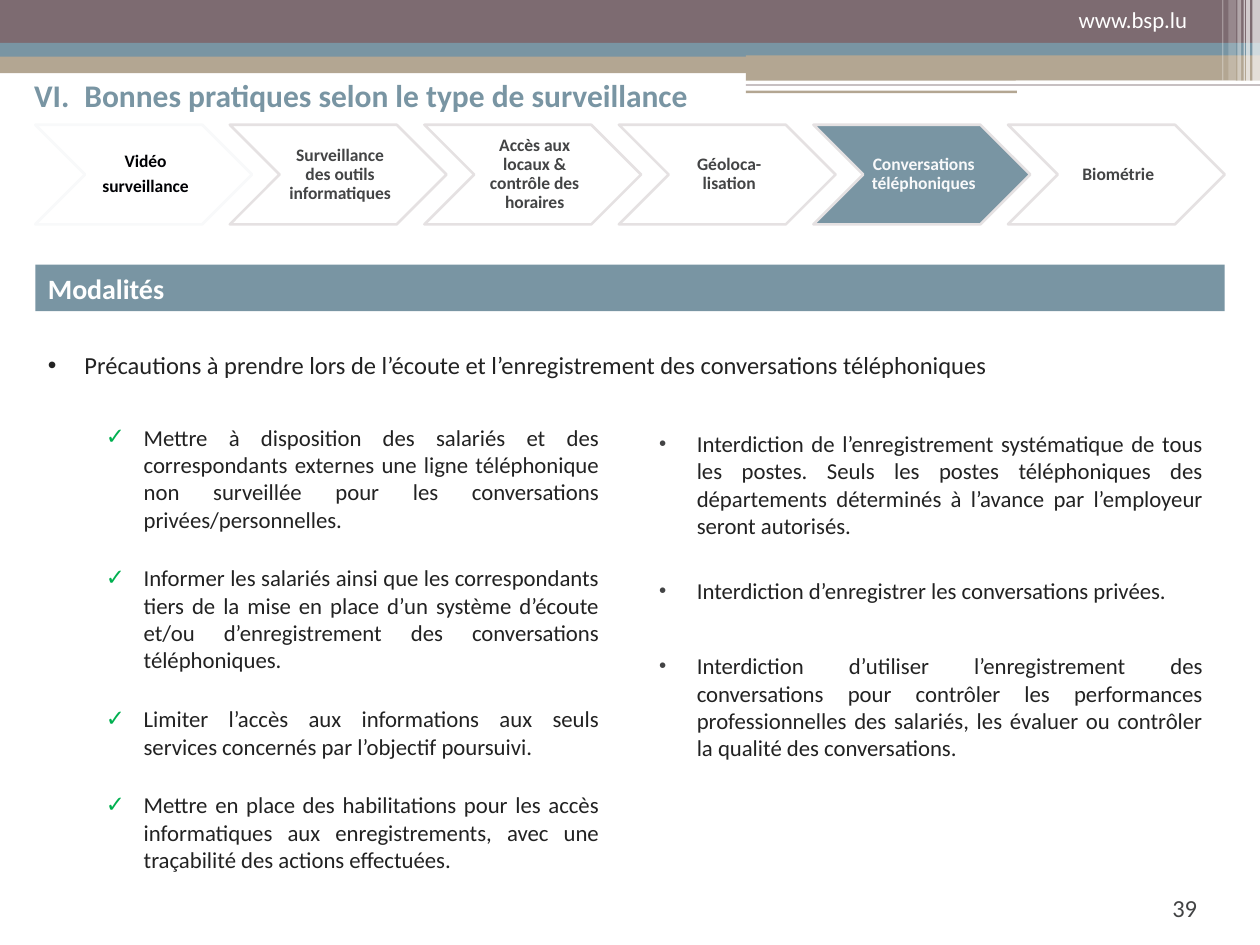
from lxml import etree
from pptx import Presentation
from pptx.dml.color import RGBColor
from pptx.enum.shapes import MSO_SHAPE as Shape
from pptx.enum.text import MSO_ANCHOR as Anchor, MSO_AUTO_SIZE as AutoSize, PP_ALIGN as Align
from pptx.oxml.ns import qn
from pptx.util import Inches, Pt

FONT = "Calibri"
PLUM, BLUE, SAND, WHITE = "7D6B71", "7995A3", "B3A692", "FFFFFF"
GREY, PALE_GREY, INK, GREEN = "434445", "E5E1E2", "222222", "00B050"


def color(hex_string):
    return RGBColor.from_string(hex_string)


def add_child(parent, tag, **attributes):
    child = etree.SubElement(parent, qn(tag))
    for name, value in attributes.items():
        child.set(name, str(value))
    return child


def place(shape, box):
    shape.left, shape.top, shape.width, shape.height = (Inches(value) for value in box)


def add_bullet(paragraph, char, hex_string, percent, indent, hanging):
    properties = paragraph._p.get_or_add_pPr()
    properties.set("marL", str(Inches(indent)))
    properties.set("indent", str(-Inches(hanging)))
    add_child(add_child(properties, "a:buClr"), "a:srgbClr", val=hex_string)
    add_child(properties, "a:buSzPct", val=percent * 1000)
    add_child(properties, "a:buFont", typeface="Arial")
    add_child(properties, "a:buChar", char=char)


def write(shape, *texts, size=13, fill=INK, bold=False, align=Align.LEFT,
          anchor=Anchor.TOP, margins=(0.1, 0.05, 0.1, 0.05), before=(),
          after=0, line_spacing=1.0, bullet=None, tab=None):
    """Fill a shape with paragraphs; before lists the gaps between them."""
    frame = shape.text_frame
    frame.word_wrap, frame.auto_size = True, AutoSize.NONE
    frame.vertical_anchor = anchor
    (frame.margin_left, frame.margin_top,
     frame.margin_right, frame.margin_bottom) = (Inches(value) for value in margins)
    gaps = (0, *before)
    for index, text in enumerate(texts):
        paragraph = frame.paragraphs[0] if index == 0 else frame.add_paragraph()
        paragraph.text = text
        if bullet:
            add_bullet(paragraph, *bullet)
        if tab:
            stops = add_child(paragraph._p.get_or_add_pPr(), "a:tabLst")
            add_child(stops, "a:tab", pos=Inches(tab), algn="l")
        paragraph.alignment = align
        paragraph.line_spacing = line_spacing
        paragraph.space_before = Pt(gaps[index] if index < len(gaps) else 0)
        paragraph.space_after = Pt(after)
        font = paragraph.font
        font.name, font.size, font.bold = FONT, Pt(size), bold
        font.color.rgb = color(fill)


def add_text(slide, box, *texts, **style):
    shape = slide.shapes.add_textbox(*(Inches(value) for value in box))
    write(shape, *texts, **style)


def add_shape(slide, kind, box, fill=None, opacity=100, line=None):
    shape = slide.shapes.add_shape(kind, *(Inches(value) for value in box))
    shape.shadow.inherit = False
    if fill:
        shape.fill.solid()
        shape.fill.fore_color.rgb = color(fill)
        if opacity < 100:
            tint = shape._element.spPr.find(qn("a:solidFill"))[0]
            add_child(tint, "a:alpha", val=opacity * 1000)
    else:
        shape.fill.background()
    if line:
        shape.line.color.rgb = color(line)
        shape.line.width = Pt(1.5)
    else:
        shape.line.fill.background()


def add_header(slide, left, top, width):
    right = left + width
    middle = 5.92
    half = right - middle
    # Colour bands
    for box, fill in (
        ((middle, 0.39, half, 0.1), BLUE),
        ((left, 0.43, 7.24, 0.15), SAND),
        ((left, top, width, 0.37), PLUM),
        ((left, 0.34, width, 0.11), BLUE),
        ((middle, 0.44, half, 0.2), SAND),
    ):
        add_shape(slide, Shape.RECTANGLE, box, fill)
    add_shape(slide, Shape.ROUNDED_RECTANGLE, (8.06, 0.64, 1.75, 0.04), WHITE)
    # Translucent stripes at the right edge
    for x, stripe_width, height, opacity in (
        (9.94, 0.06, 0.71, 65), (9.89, 0.03, 0.71, 65), (9.87, 0.01, 0.71, 60),
        (9.82, 0.03, 0.71, 40), (9.75, 0.06, 0.67, 20), (9.7, 0.01, 0.67, 30),
    ):
        add_shape(slide, Shape.RECTANGLE, (x, top, stripe_width, height), WHITE, opacity)
    # Thin rules
    add_shape(slide, Shape.RECTANGLE, (middle, 0.67, half, 0.01), PLUM, 65)
    add_shape(slide, Shape.RECTANGLE, (middle, 0.72, 2.15, 0.02), SAND)
    add_text(slide, (8.07, 0, 1.45, 0.5), "www.bsp.lu", fill=WHITE, align=Align.RIGHT)


def add_steps(slide, left, top, width, height):
    steps = (
        (("Vidéo", "surveillance"), None, "F8F9FA", "000104"),
        (("Surveillance des outils informatiques",), None, PALE_GREY, GREY),
        (("Accès aux locaux & contrôle des horaires",), None, PALE_GREY, GREY),
        (("Géoloca-lisation",), None, PALE_GREY, GREY),
        (("Conversations téléphoniques",), BLUE, PALE_GREY, "F8F9FA"),
        (("Biométrie",), None, PALE_GREY, GREY),
    )
    chevron_width, label_width = 1.72, 0.93
    pitch = (width - chevron_width) / (len(steps) - 1)
    inset = (chevron_width - label_width) / 2
    for index, (texts, fill, line, text_color) in enumerate(steps):
        x = left + index * pitch
        add_shape(slide, Shape.CHEVRON, (x, top, chevron_width, height), fill, line=line)
        add_text(slide, (x + inset, top, label_width, height), *texts, size=10,
                 fill=text_color, bold=True, align=Align.CENTER, anchor=Anchor.MIDDLE,
                 margins=(0.04, 0.01, 0.01, 0.01), after=3.5, line_spacing=0.9)


def fill_heading(placeholder, box):
    place(placeholder, box)
    placeholder.fill.solid()
    placeholder.fill.fore_color.rgb = color(BLUE)
    write(placeholder, "Modalités", size=16, fill=WHITE, bold=True, anchor=Anchor.MIDDLE)


def fill_list(placeholder, box, *texts, **style):
    place(placeholder, box)
    write(placeholder, *texts, **style)


def main():
    presentation = Presentation()
    presentation.slide_width, presentation.slide_height = Inches(10), Inches(7.5)
    slide = presentation.slides.add_slide(presentation.slide_layouts[4])
    title, heading, left_list, intro, right_list = slide.placeholders

    add_header(slide, -0.04, -0.03, 10.04)
    place(title, (0.17, -0.11, 9.71, 1.73))
    write(title, "VI. \tBonnes pratiques selon le type de surveillance", size=18,
          fill=BLUE, bold=True, anchor=Anchor.MIDDLE, tab=0.4)
    add_steps(slide, 0.28, 0.99, 9.44, 0.79)
    fill_heading(heading, (0.28, 2.1, 9.44, 0.37))

    # Introduction and the two lists
    fill_list(
        intro, (0.28, 2.73, 9.44, 0.34),
        "Précautions à prendre lors de l’écoute et l’enregistrement des conversations téléphoniques",
        size=14, bullet=("•", INK, 100, 0.29, 0.29))
    fill_list(
        left_list, (0.45, 3.31, 4.4, 3.46),
        "Mettre à disposition des salariés et des correspondants externes une ligne "
        "téléphonique non surveillée pour les conversations privées/personnelles.",
        "Informer les salariés ainsi que les correspondants tiers de la mise en place d’un "
        "système d’écoute et/ou d’enregistrement des conversations téléphoniques.",
        "Limiter l’accès aux informations aux seuls services concernés par l’objectif poursuivi.",
        "Mettre en place des habilitations pour les accès informatiques aux enregistrements, "
        "avec une traçabilité des actions effectuées.",
        align=Align.JUSTIFY, before=(18, 18, 18), bullet=("✓", GREEN, 100, 0.59, 0.3))
    fill_list(
        right_list, (4.84, 3.06, 4.8, 4.31),
        "Interdiction de l’enregistrement systématique de tous les postes. Seuls les postes "
        "téléphoniques des départements déterminés à l’avance par l’employeur seront autorisés.",
        "Interdiction d’enregistrer les conversations privées.",
        "Interdiction d’utiliser l’enregistrement des conversations pour contrôler les "
        "performances professionnelles des salariés, les évaluer ou contrôler la qualité "
        "des conversations.",
        align=Align.JUSTIFY, margins=(0.1, 0.35, 0.1, 0.05), before=(21.5, 27.5),
        bullet=("•", GREY, 90, 0.59, 0.3))

    # Page number
    add_text(slide, (8.15, 7.04, 1.45, 0.5), "39", size=14, fill=GREY, align=Align.RIGHT)
    presentation.save("out.pptx")


if __name__ == "__main__":
    main()
